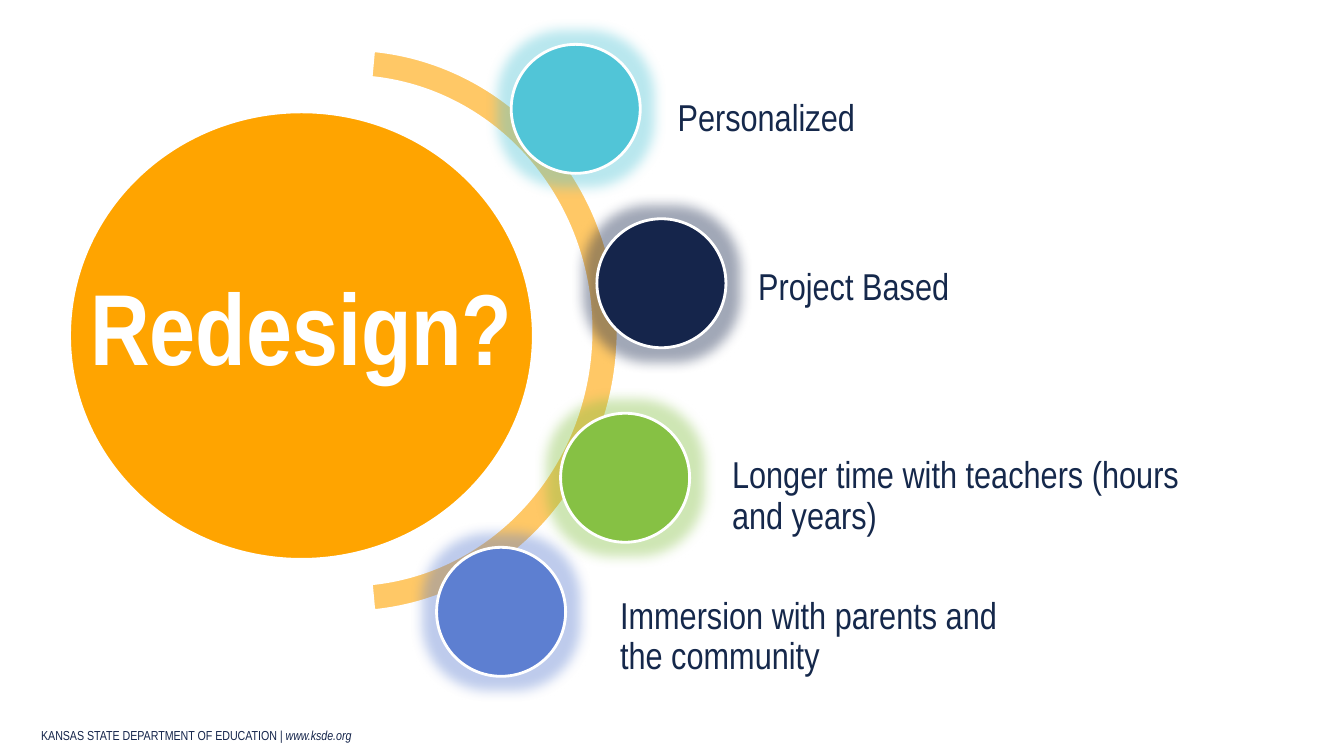
from lxml import etree
from pptx import Presentation
from pptx.dml.color import RGBColor
from pptx.enum.shapes import MSO_SHAPE
from pptx.enum.text import MSO_ANCHOR, PP_ALIGN
from pptx.oxml.ns import qn
from pptx.util import Inches, Pt

OVAL, ARC = MSO_SHAPE.OVAL, MSO_SHAPE.BLOCK_ARC
TOP, MIDDLE, BOTTOM = MSO_ANCHOR.TOP, MSO_ANCHOR.MIDDLE, MSO_ANCHOR.BOTTOM
LEFT, CENTER = PP_ALIGN.LEFT, PP_ALIGN.CENTER

WHITE = RGBColor(0xFF, 0xFF, 0xFF)
ORANGE = RGBColor(0xFF, 0xA4, 0x00)
AMBER = RGBColor(0xFF, 0xC8, 0x66)
NAVY = RGBColor(0x15, 0x25, 0x4B)
INK = RGBColor(0x15, 0x28, 0x4B)
GREEN = RGBColor(0x86, 0xC1, 0x44)
BLUE = RGBColor(0x5D, 0x7F, 0xD1)
CYAN = RGBColor(0x51, 0xC5, 0xD7)

FONT = "Arial Narrow"
DOT = 1.28
HUB = (0.69, 1.11, 4.6, 4.44)

POINTS = [
    ("Project Based", NAVY, (5.92, 2.17), (7.48, 2.57, 4, 0.59), MIDDLE, 0.04),
    ("Longer time with teachers (hours and years)", GREEN, (5.56, 4.1),
     (7.22, 4.31, 4.75, 1.24), MIDDLE, 0.04),
    ("Immersion with parents and the community", BLUE, (4.33, 5.43),
     (6.11, 5.83, 4.14, 0.99), MIDDLE, 0.04),
    ("Personalized", CYAN, (5.07, 0.44), (6.72, 0.98, 4.21, 0.45), TOP, 0),
]


def inches(box):
    return [Inches(n) for n in box]


def add_shape(slide, kind, box, color):
    shape = slide.shapes.add_shape(kind, *inches(box))
    shape.shadow.inherit = False
    shape.fill.solid()
    shape.fill.fore_color.rgb = color
    shape.line.color.rgb = WHITE
    shape.line.width = Pt(2)
    return shape


def add_glow(shape, color):
    effects = shape.element.spPr.find(qn("a:effectLst"))
    glow = etree.SubElement(effects, qn("a:glow"), rad=str(Inches(0.25)))
    tint = etree.SubElement(glow, qn("a:srgbClr"), val=str(color))
    etree.SubElement(tint, qn("a:alpha"), val="40000")


def set_text(shape, *runs, size=26.7, color=INK, bold=False, align=LEFT,
             anchor=MIDDLE, inset=(0.04, 0.04), space=0.9, wrap=True):
    frame = shape.text_frame
    frame.word_wrap = wrap
    frame.vertical_anchor = anchor
    frame.margin_left = frame.margin_right = Inches(inset[0])
    frame.margin_top = frame.margin_bottom = Inches(inset[1])
    para = frame.paragraphs[0]
    para.alignment = align
    para.line_spacing = space
    for text, italic in runs:
        run = para.add_run()
        run.text = text
        font = run.font
        font.name, font.size, font.bold = FONT, Pt(size), bold
        font.italic = italic
        font.color.rgb = color


def add_text(slide, box, *runs, **style):
    set_text(slide.shapes.add_textbox(*inches(box)), *runs, **style)


def add_title(slide, text):
    title = slide.shapes.title
    title.left, title.top, title.width, title.height = inches(HUB)
    hub = add_shape(slide, OVAL, HUB, ORANGE)
    title.element.addprevious(hub.element)
    set_text(title, (text, False), size=72, color=WHITE, bold=True,
             align=CENTER, inset=(0, 0), space=Pt(72), wrap=False)


def add_point(slide, text, color, spot, box, anchor, inset):
    dot = add_shape(slide, OVAL, (*spot, DOT, DOT), color)
    add_glow(dot, color)
    add_text(slide, box, (text, False), anchor=anchor, inset=(inset, inset))


def main():
    deck = Presentation()
    deck.slide_width, deck.slide_height = Inches(13.33), Inches(7.5)
    slide = deck.slides.add_slide(deck.slide_layouts[5])
    add_text(slide, (0.31, 7.16, 6.36, 0.26),
             ("KANSAS STATE DEPARTMENT OF EDUCATION ", False),
             ("| www.ksde.org", True), size=9.3, color=NAVY,
             anchor=BOTTOM, inset=(0.1, 0.05), space=1.0)
    add_title(slide, "Redesign?")
    arc = add_shape(slide, ARC, (0.78, 0.49, 5.35, 5.58), AMBER)
    for i, value in enumerate((165.09, 50.88, 0.05)):
        arc.adjustments[i] = value
    for point in POINTS:
        add_point(slide, *point)
    deck.save("out.pptx")


if __name__ == "__main__":
    main()
